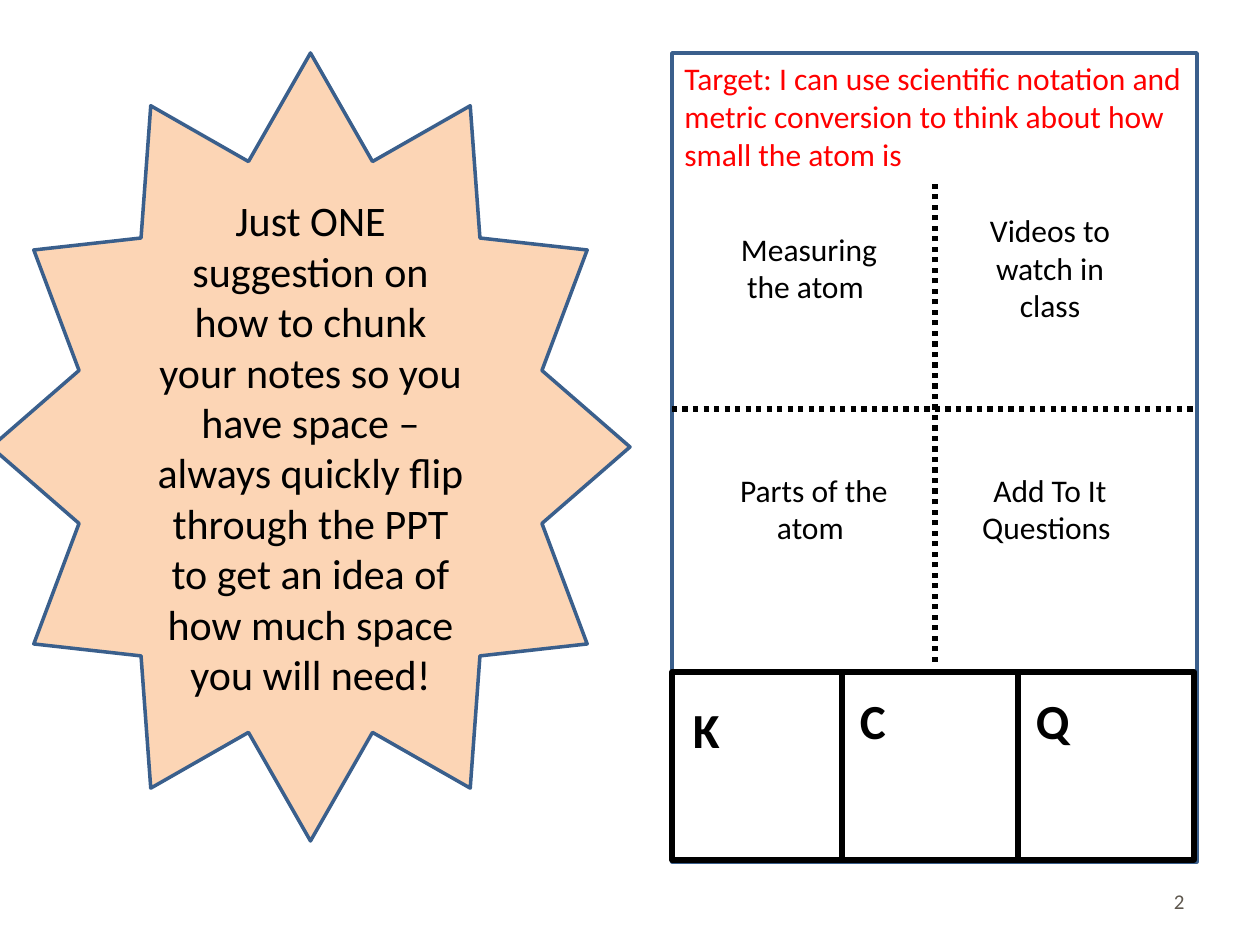
from dataclasses import dataclass

from lxml.etree import SubElement
from pptx import Presentation
from pptx.dml.color import RGBColor
from pptx.enum.dml import MSO_LINE
from pptx.enum.shapes import MSO_CONNECTOR as Connector, MSO_SHAPE as Shape
from pptx.enum.text import MSO_ANCHOR as Anchor, PP_ALIGN as Align
from pptx.oxml.ns import qn
from pptx.util import Pt

EMU_PER_PX = 914400 / 126


@dataclass(frozen=True)
class Theme:
    """Colours, font and type sizes of the slide."""
    font: str = "Calibri"
    ink: str = "000000"
    paper: str = "FFFFFF"
    target: str = "FF0000"
    outline: str = "3A5F8C"
    burst: str = "FCD5B5"
    number: str = "5E574E"
    small: int = 12
    body: int = 18
    callout: int = 24
    letter: int = 28
    thin: int = 2
    thick: int = 3


THEME = Theme()


def px(length):
    """Convert pixels to EMU."""
    return round(length * EMU_PER_PX)


def write(shape, text, size, color, align=Align.LEFT, anchor=Anchor.MIDDLE, bold=False):
    """Write one formatted run into a shape."""
    frame = shape.text_frame
    frame.word_wrap = True
    frame.vertical_anchor = anchor
    paragraph = frame.paragraphs[0]
    paragraph.alignment = align
    run = paragraph.add_run()
    run.text = text
    run.font.name = THEME.font
    run.font.size = Pt(size)
    run.font.bold = bold
    run.font.color.rgb = RGBColor.from_string(color)


def add_label(slide, box, text, size, color, align):
    """Add a text box."""
    label = slide.shapes.add_textbox(*map(px, box))
    write(label, text, size, color, align)


def add_outlined(slide, kind, box, line_color, line_width, fill=None):
    """Add a preset shape with an outline and an optional fill."""
    shape = slide.shapes.add_shape(kind, *map(px, box))
    shape.shadow.inherit = False
    if fill:
        shape.fill.solid()
        shape.fill.fore_color.rgb = RGBColor.from_string(fill)
    else:
        shape.fill.background()
    shape.line.color.rgb = RGBColor.from_string(line_color)
    shape.line.width = Pt(line_width)
    return shape


def add_dotted_line(slide, start, end):
    """Add a dotted divider between two points."""
    line = slide.shapes.add_connector(Connector.STRAIGHT, *map(px, (*start, *end)))
    line.line.color.rgb = RGBColor.from_string(THEME.ink)
    line.line.width = Pt(THEME.thick)
    line.line.dash_style = MSO_LINE.ROUND_DOT
    SubElement(line._element.spPr, qn("a:effectLst"))


def add_target_panel(slide, box):
    """Add the outlined notes page with its learning target."""
    panel = add_outlined(slide, Shape.RECTANGLE, box, THEME.outline, THEME.thin)
    write(panel, "Target: I can use scientific notation and metric conversion "
          "to think about how small the atom is",
          THEME.body, THEME.target, anchor=Anchor.TOP)


def add_quadrants(slide, box):
    """Add four topics split by dotted dividers."""
    left, top, width, height = box
    topics = (
        ("Measuring the atom ", 32, 0, 210),
        ("Parts of the atom ", 42, 1, 200),
        ("Videos to watch in class", 278, 0, 200),
        ("Add To It Questions ", 278, 1, 200),
    )
    row_height = 241
    for text, offset, row, label_width in topics:
        label_box = (left + offset, top - 32 + row * row_height, label_width, row_height)
        add_label(slide, label_box, text, THEME.body, THEME.ink, Align.CENTER)
    middle_x, middle_y = left + width // 2 + 1, top + 230
    add_dotted_line(slide, (left, middle_y), (left + width, middle_y))
    add_dotted_line(slide, (middle_x, top + height), (middle_x, top))


def add_letter_boxes(slide, box):
    """Add the row of K, C and Q boxes."""
    left, top, width, height = box
    letters = (("K", 0, 21, 28), ("C", 170, 18, 19), ("Q", 346, 18, 19))
    for letter, offset, inset_left, inset_top in letters:
        cell_box = (left + offset, top, width - 346, height)
        cell = add_outlined(slide, Shape.RECTANGLE, cell_box,
                            THEME.ink, THEME.thick, THEME.paper)
        cell.text_frame.margin_left = px(inset_left)
        cell.text_frame.margin_top = px(inset_top)
        write(cell, letter, THEME.letter, THEME.ink, anchor=Anchor.TOP, bold=True)


def add_burst(slide, box):
    """Add the star with advice on note space."""
    star = add_outlined(slide, Shape.STAR_12_POINT, box,
                        THEME.outline, THEME.thin, THEME.burst)
    write(star, "Just ONE suggestion on how to chunk your notes so you have space – "
          "always quickly flip through the PPT to get an idea of how much space "
          "you will need!", THEME.callout, THEME.ink, Align.CENTER)


def main():
    """Build and save the slide."""
    presentation = Presentation()
    presentation.slide_width, presentation.slide_height = px(1260), px(945)
    slide = presentation.slides.add_slide(presentation.slide_layouts[6])
    add_label(slide, (903, 876, 294, 50), "2", THEME.small, THEME.number, Align.RIGHT)
    add_target_panel(slide, (672, 53, 525, 809))
    add_quadrants(slide, (672, 179, 525, 483))
    add_letter_boxes(slide, (672, 672, 522, 188))
    add_burst(slide, (-9, 53, 639, 788))
    presentation.save("out.pptx")


if __name__ == "__main__":
    main()
